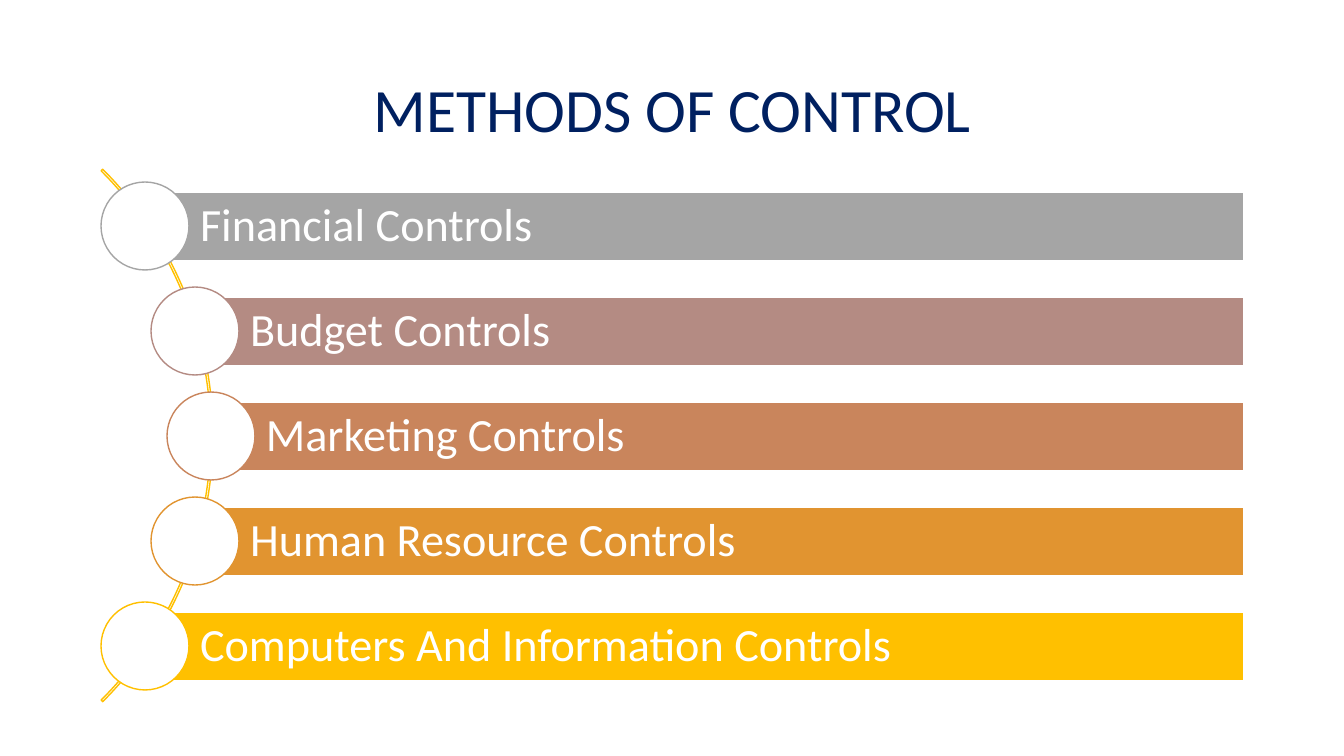
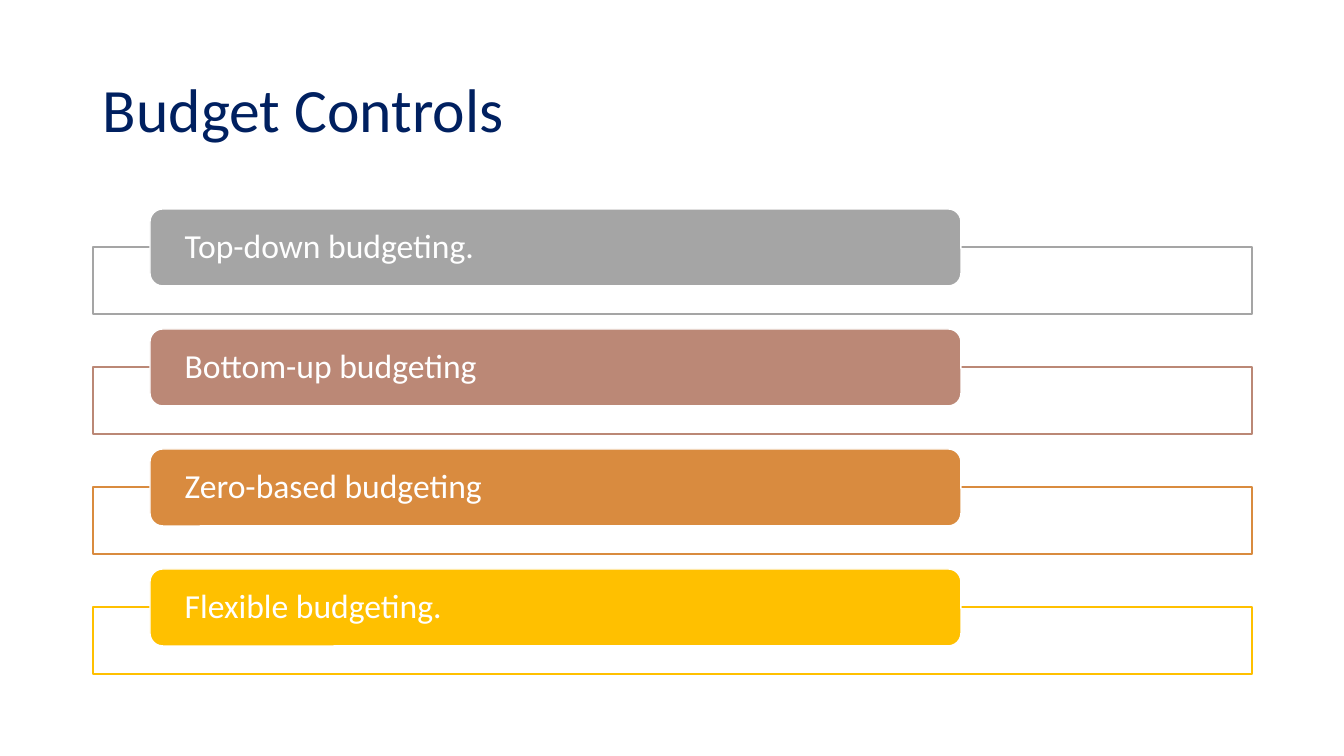
from pptx import Presentation
from pptx.dml.color import RGBColor
from pptx.enum.shapes import MSO_SHAPE as Shape
from pptx.enum.text import MSO_ANCHOR as Anchor, PP_ALIGN as Align
from pptx.util import Emu, Pt

# Shared look
SLIDE_WIDTH, SLIDE_HEIGHT = 1344, 756
EMU_PER_PX = 12192000 / SLIDE_WIDTH
FONT = "Calibri"
NAVY = RGBColor(0x00, 0x20, 0x60)
WHITE = RGBColor(0xFF, 0xFF, 0xFF)
GREY = RGBColor(0xA5, 0xA5, 0xA5)
GOLD = RGBColor(0xFF, 0xC0, 0x00)
MAUVE = RGBColor(0xB4, 0x8B, 0x83)
CLAY = RGBColor(0xC9, 0x85, 0x5C)
AMBER = RGBColor(0xE1, 0x94, 0x30)
ROSE = RGBColor(0xBB, 0x88, 0x76)
ORANGE = RGBColor(0xD9, 0x8B, 0x3F)

# Text, colour and indent of each bar
METHODS = [
    ("Financial Controls", GREY, 0),
    ("Budget Controls", MAUVE, 50),
    ("Marketing Controls", CLAY, 66),
    ("Human Resource Controls", AMBER, 50),
    ("Computers And Information Controls", GOLD, 0),
]
BUDGETS = [
    ("Top-down budgeting.", GREY),
    ("Bottom-up budgeting", ROSE),
    ("Zero-based budgeting", ORANGE),
    ("Flexible budgeting.", GOLD),
]


def px(length):
    return Emu(round(length * EMU_PER_PX))


def write(box, text, size, color=WHITE, align=Align.LEFT, insets=(9, 9, 9, 9)):
    frame = box.text_frame
    frame.word_wrap = True
    frame.vertical_anchor = Anchor.MIDDLE
    (frame.margin_left, frame.margin_top,
     frame.margin_right, frame.margin_bottom) = map(px, insets)
    para = frame.paragraphs[0]
    para.alignment = align
    para.line_spacing = 0.9
    span = para.add_run()
    span.text = text
    span.font.name = FONT
    span.font.size = Pt(size)
    span.font.color.rgb = color


def add_box(page, kind, left, top, width, height, line, fill=None):
    box = page.shapes.add_shape(kind, px(left), px(top), px(width), px(height))
    box.shadow.inherit = False
    if fill is None:
        box.fill.background()
    else:
        box.fill.solid()
        box.fill.fore_color.rgb = fill
    box.line.color.rgb = line
    box.line.width = Pt(1)
    return box


def add_page(deck, title, align):
    page = deck.slides.add_slide(deck.slide_layouts[5])
    heading = page.shapes.title
    heading.left, heading.top = px(93), px(40)
    heading.width, heading.height = px(1159), px(146)
    write(heading, title, 44, color=NAVY, align=align, insets=(10, 5, 10, 5))
    return page


def add_arc(page):
    arc = add_box(page, Shape.BLOCK_ARC, -540, 59, 753, 753, GOLD)
    # Start angle, end angle and thickness
    for index, value in enumerate((189, 27, 0.003)):
        arc.adjustments[index] = value


def add_method(page, row, text, color, indent):
    left, top = 145 + indent, 192 + 105 * row
    right, height, diameter = 1244, 69, 88
    bar = add_box(page, Shape.RECTANGLE, left, top, right - left, height,
                  WHITE, fill=color)
    write(bar, text, 33, insets=(55, 9, 9, 9))
    # Circle centred on the left edge of the bar
    add_box(page, Shape.OVAL, left - diameter // 2,
            top + (height - diameter) // 2, diameter, diameter,
            color, fill=WHITE)


def add_budget(page, row, text, color):
    top = 209 + 120 * row
    add_box(page, Shape.RECTANGLE, 93, top + 38, 1159, 67, color, fill=WHITE)
    tab = add_box(page, Shape.ROUNDED_RECTANGLE, 150, top, 811, 77,
                  WHITE, fill=color)
    write(tab, text, 24, insets=(31, 0, 31, 0))


def main():
    deck = Presentation()
    deck.slide_width, deck.slide_height = px(SLIDE_WIDTH), px(SLIDE_HEIGHT)

    # Methods along an arc
    page = add_page(deck, "METHODS OF CONTROL", Align.CENTER)
    add_arc(page)
    for row, method in enumerate(METHODS):
        add_method(page, row, *method)

    # Budget types as tabs on frames
    page = add_page(deck, "Budget Controls", Align.LEFT)
    for row, budget in enumerate(BUDGETS):
        add_budget(page, row, *budget)

    deck.save("out.pptx")


if __name__ == "__main__":
    main()
